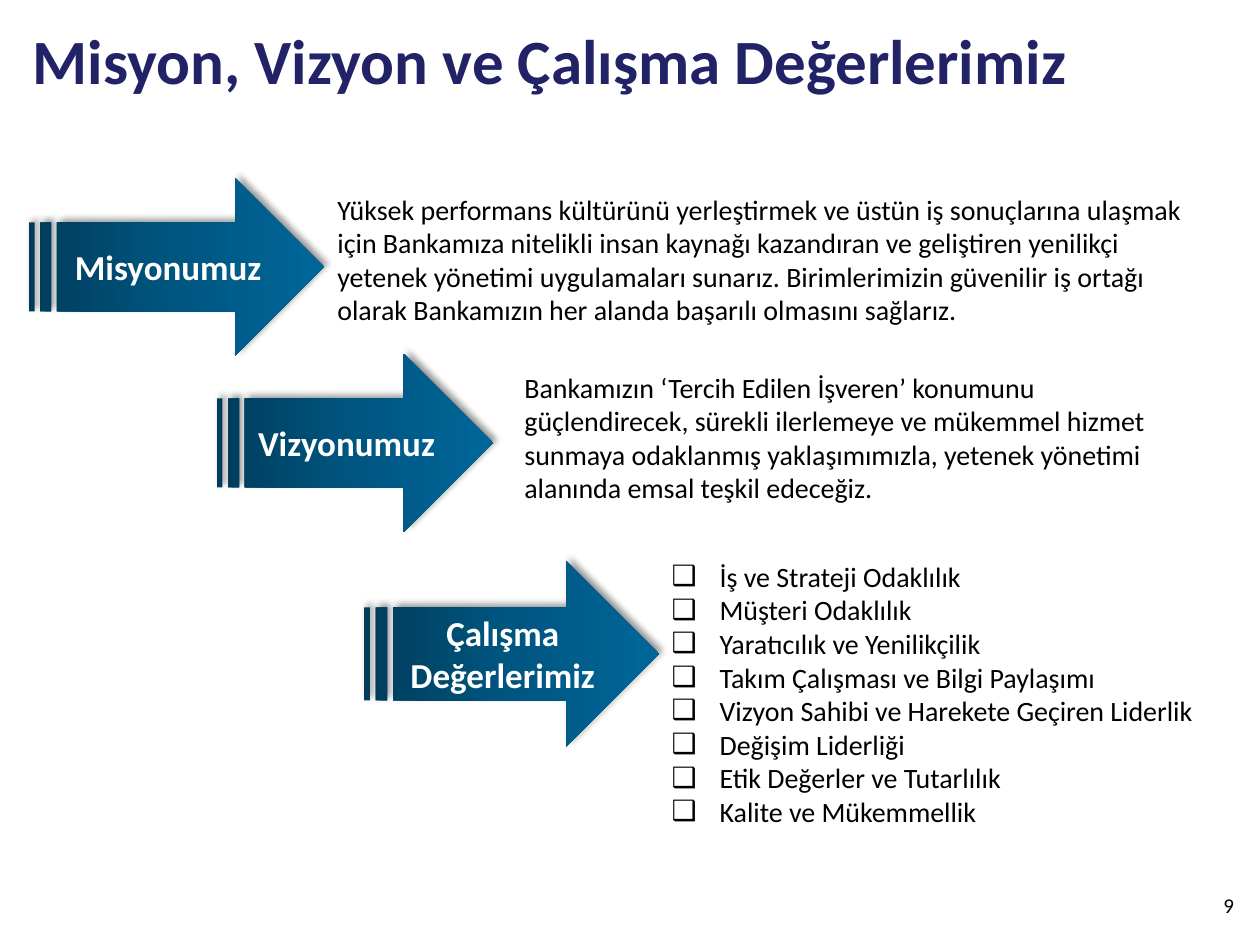
import copy

import pptx
import pptx.dml.color
import pptx.enum.shapes
import pptx.enum.text
import pptx.oxml
import pptx.oxml.ns
import pptx.util

RGBColor = pptx.dml.color.RGBColor
Anchor = pptx.enum.text.MSO_ANCHOR
Align = pptx.enum.text.PP_ALIGN

NAVY = RGBColor(0x22, 0x22, 0x67)
BLACK = RGBColor(0, 0, 0)
WHITE = RGBColor(255, 255, 255)
ARROW_STOPS = [
    (0, RGBColor(0x00, 0x3C, 0x5B)),
    (0.5, RGBColor(0x00, 0x56, 0x81)),
    (1, RGBColor(0x00, 0x66, 0x99)),
]
FONT = "Calibri"
PX_PER_INCH = 126
BULLET_INDENT = 48

TITLE = "Misyon, Vizyon ve Çalışma Değerlerimiz"
MISSION = (
    "Yüksek performans kültürünü yerleştirmek ve üstün iş sonuçlarına ulaşmak "
    "için Bankamıza nitelikli insan kaynağı kazandıran ve geliştiren yenilikçi "
    "yetenek yönetimi uygulamaları sunarız. Birimlerimizin güvenilir iş ortağı "
    "olarak Bankamızın her alanda başarılı olmasını sağlarız."
)
VISION = (
    "Bankamızın ‘Tercih Edilen İşveren’ konumunu güçlendirecek, sürekli "
    "ilerlemeye ve mükemmel hizmet sunmaya odaklanmış yaklaşımımızla, yetenek "
    "yönetimi alanında emsal teşkil edeceğiz."
)
VALUES = [
    "İş ve Strateji Odaklılık",
    "Müşteri Odaklılık",
    "Yaratıcılık ve Yenilikçilik",
    "Takım Çalışması ve Bilgi Paylaşımı",
    "Vizyon Sahibi ve Harekete Geçiren Liderlik",
    "Değişim Liderliği",
    "Etik Değerler ve Tutarlılık",
    "Kalite ve Mükemmellik",
]
ARROWS = [
    ("Misyonumuz", (29, 178, 295, 178)),
    ("Vizyonumuz", (217, 354, 276, 178)),
    ("Çalışma Değerlerimiz", (364, 561, 295, 186)),
]


def px(length):
    """Turn pixels into EMU."""
    return pptx.util.Emu(round(length * 914400 / PX_PER_INCH))


def place(shape, area):
    """Move and size a shape to an area in pixels."""
    shape.left, shape.top, shape.width, shape.height = map(px, area)


def write(para, text, size, color, bold=False, align=Align.LEFT):
    """Write one formatted run into a paragraph."""
    para.alignment = align
    para.space_before = pptx.util.Pt(0)
    span = para.add_run()
    span.text = text
    span.font.name = FONT
    span.font.size = pptx.util.Pt(size)
    span.font.bold = bold
    span.font.color.rgb = color


def set_frame(shape, anchor, wrap=True):
    """Fix the wrapping and anchor of a shape's text and return its frame."""
    frame = shape.text_frame
    frame.auto_size = pptx.enum.text.MSO_AUTO_SIZE.NONE
    frame.word_wrap = wrap
    frame.vertical_anchor = anchor
    return frame


def add_title(page):
    """Fill the title placeholder."""
    title = page.shapes.title
    place(title, (20, 10, 1191, 98))
    frame = set_frame(title, Anchor.MIDDLE)
    write(frame.paragraphs[0], TITLE, 36, NAVY, bold=True)


def add_text(page, text, area, size=16, wrap=True):
    """Add a plain text box."""
    box = page.shapes.add_textbox(*map(px, area))
    frame = set_frame(box, Anchor.TOP, wrap)
    write(frame.paragraphs[0], text, size, BLACK)


def add_bullet(para):
    """Give a paragraph a hollow square bullet with a hanging indent."""
    properties = para._p.get_or_add_pPr()
    properties.set("marL", str(px(BULLET_INDENT)))
    properties.set("indent", str(-px(BULLET_INDENT)))
    bullet = properties.makeelement(pptx.oxml.ns.qn("a:buChar"), {"char": "❑"})
    properties.append(bullet)


def add_values(page):
    """Fill the body placeholder with the list of values."""
    body = page.placeholders[1]
    place(body, (659, 553, 552, 285))
    frame = set_frame(body, Anchor.TOP)
    for index, value in enumerate(VALUES):
        para = frame.add_paragraph() if index else frame.paragraphs[0]
        add_bullet(para)
        write(para, value, 16, BLACK)


def fill_gradient(shape):
    """Fill a shape with the left to right arrow gradient."""
    shape.fill.gradient()
    shape.fill.gradient_angle = 0
    stop_list = shape._element.spPr.find(".//" + pptx.oxml.ns.qn("a:gsLst"))
    stop_list.insert(1, copy.deepcopy(stop_list[0]))
    for stop, (position, color) in zip(shape.fill.gradient_stops, ARROW_STOPS):
        stop.position = position
        stop.color.rgb = color


def add_shadow(shape):
    """Cast a soft shadow up and to the right."""
    shape.shadow.inherit = False
    effects = shape._element.spPr.find(pptx.oxml.ns.qn("a:effectLst"))
    effects.append(pptx.oxml.parse_xml(
        f'<a:outerShdw {pptx.oxml.ns.nsdecls("a")} blurRad="50800" dist="38100" '
        'dir="18900000" algn="bl" rotWithShape="0">'
        '<a:srgbClr val="000000"><a:alpha val="40000"/></a:srgbClr></a:outerShdw>'
    ))


def add_arrow(page, label, area):
    """Add a striped arrow with a centred label."""
    kind = pptx.enum.shapes.MSO_SHAPE.STRIPED_RIGHT_ARROW
    arrow = page.shapes.add_shape(kind, *map(px, area))
    fill_gradient(arrow)
    arrow.line.fill.background()
    add_shadow(arrow)
    frame = set_frame(arrow, Anchor.MIDDLE)
    write(frame.paragraphs[0], label, 20, WHITE, bold=True, align=Align.CENTER)


def main():
    """Build the slide and save the deck."""
    deck = pptx.Presentation()
    deck.slide_width = pptx.util.Inches(10)
    deck.slide_height = pptx.util.Inches(7.5)
    page = deck.slides.add_slide(deck.slide_layouts[1])
    add_title(page)
    add_text(page, MISSION, (325, 186, 886, 149))
    add_values(page)
    add_text(page, VISION, (512, 364, 659, 149))
    for label, area in ARROWS:
        add_arrow(page, label, area)
    add_text(page, "9", (1211, 886, 37, 38), size=12, wrap=False)
    deck.save("out.pptx")


if __name__ == "__main__":
    main()
